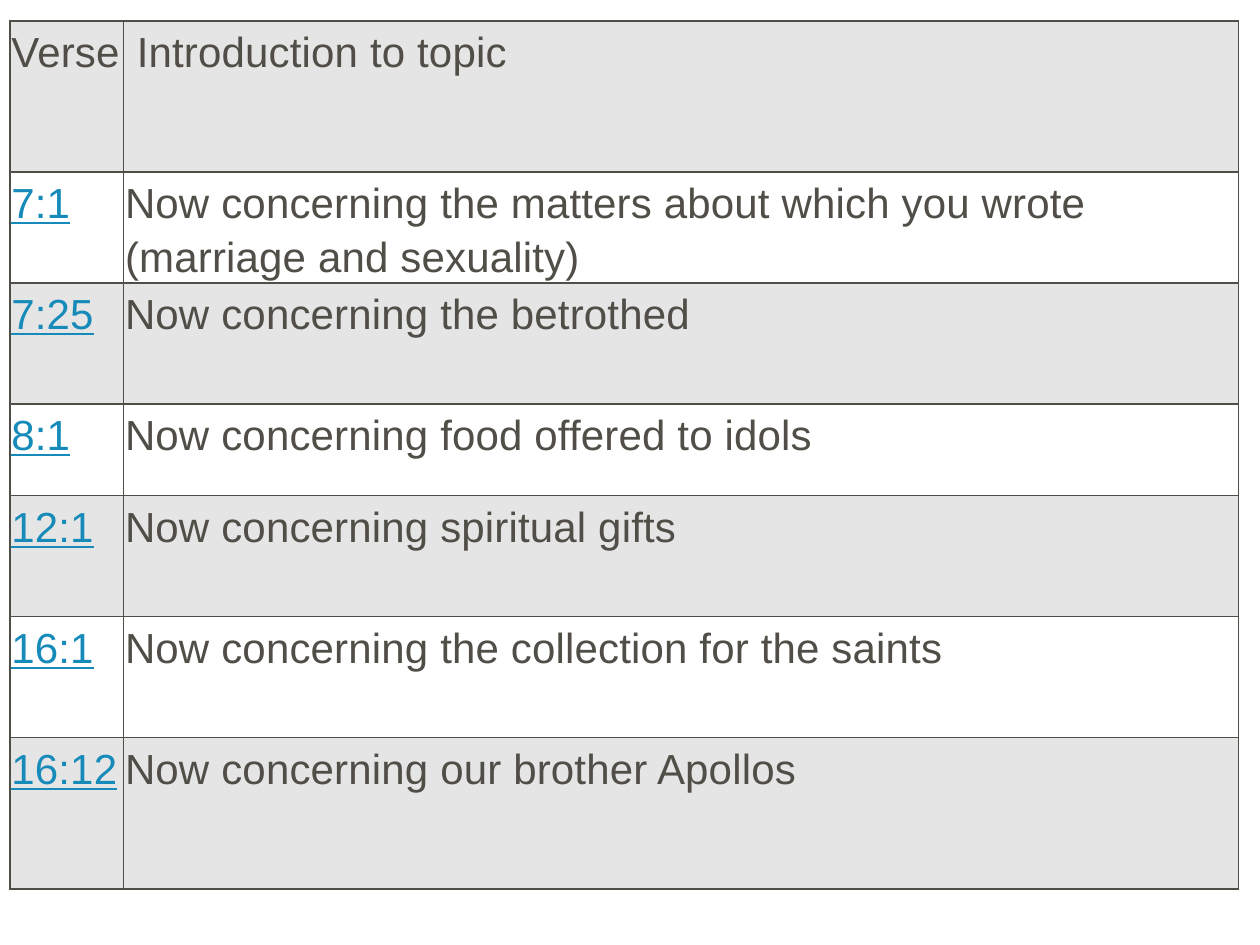
import pptx
import pptx.util
import pptx.dml.color
import pptx.oxml
import pptx.oxml.ns
from pptx.util import Cm

# Content: verse, introduction, row height in cm
ROWS = [
    ("Verse", " Introduction to topic", 3.05),
    ("7:1", "Now concerning the matters about which you wrote (marriage and sexuality)", 1.85),
    ("7:25", "Now concerning the betrothed", 2.44),
    ("8:1", "Now concerning food offered to idols", 1.85),
    ("12:1", "Now concerning spiritual gifts", 2.44),
    ("16:1", "Now concerning the collection for the saints", 2.44),
    ("16:12", "Now concerning our brother Apollos", 3.05),
]
COL_WIDTHS = (2.29, 22.48)
LEFT, TOP = 0.2, 0.42
INK, VERSE_BLUE = "514D47", "168BBA"
BANDS = ("E5E5E5", "FFFFFF")


def set_color(fmt, color):
    fmt.rgb = pptx.dml.color.RGBColor.from_string(color)


def add_borders(cell, color, width):
    tc_pr = cell._tc.get_or_add_tcPr()
    for i, side in enumerate(("lnL", "lnR", "lnT", "lnB")):
        tc_pr.insert(i, pptx.oxml.parse_xml(
            f'<a:{side} {pptx.oxml.ns.nsdecls("a")} w="{pptx.util.Pt(width)}">'
            f'<a:solidFill><a:srgbClr val="{color}"/></a:solidFill></a:{side}>'))


def fill_cell(cell, text, color, band, underline):
    cell.margin_left = cell.margin_right = Cm(0.03)
    cell.margin_top = cell.margin_bottom = Cm(0.03)
    cell.fill.solid()
    set_color(cell.fill.fore_color, band)
    add_borders(cell, INK, 1)
    p = cell.text_frame.paragraphs[0]
    p.text = text
    p.line_spacing = 1.15
    r = p.runs[0]
    r.font.name = "Arial"
    r.font.size = pptx.util.Pt(24)
    r.font.bold = False
    r.font.underline = underline
    set_color(r.font.color, color)
    r.font._element.set("spc", "10")


def main():
    prs = pptx.Presentation()
    prs.slide_width, prs.slide_height = Cm(25.4), Cm(19.05)
    s = prs.slides.add_slide(prs.slide_layouts[6])

    # Table grid
    height = sum(row[2] for row in ROWS)
    table = s.shapes.add_table(len(ROWS), len(COL_WIDTHS), Cm(LEFT), Cm(TOP),
                               Cm(sum(COL_WIDTHS)), Cm(height)).table
    for col, width in zip(table.columns, COL_WIDTHS):
        col.width = Cm(width)

    # Banded rows, verse references underlined below the header
    for i, (verse, topic, row_height) in enumerate(ROWS):
        table.rows[i].height = Cm(row_height)
        band = BANDS[i % 2]
        is_verse = i > 0
        fill_cell(table.cell(i, 0), verse, VERSE_BLUE if is_verse else INK, band, is_verse)
        fill_cell(table.cell(i, 1), topic, INK, band, False)

    prs.save("out.pptx")


if __name__ == "__main__":
    main()
